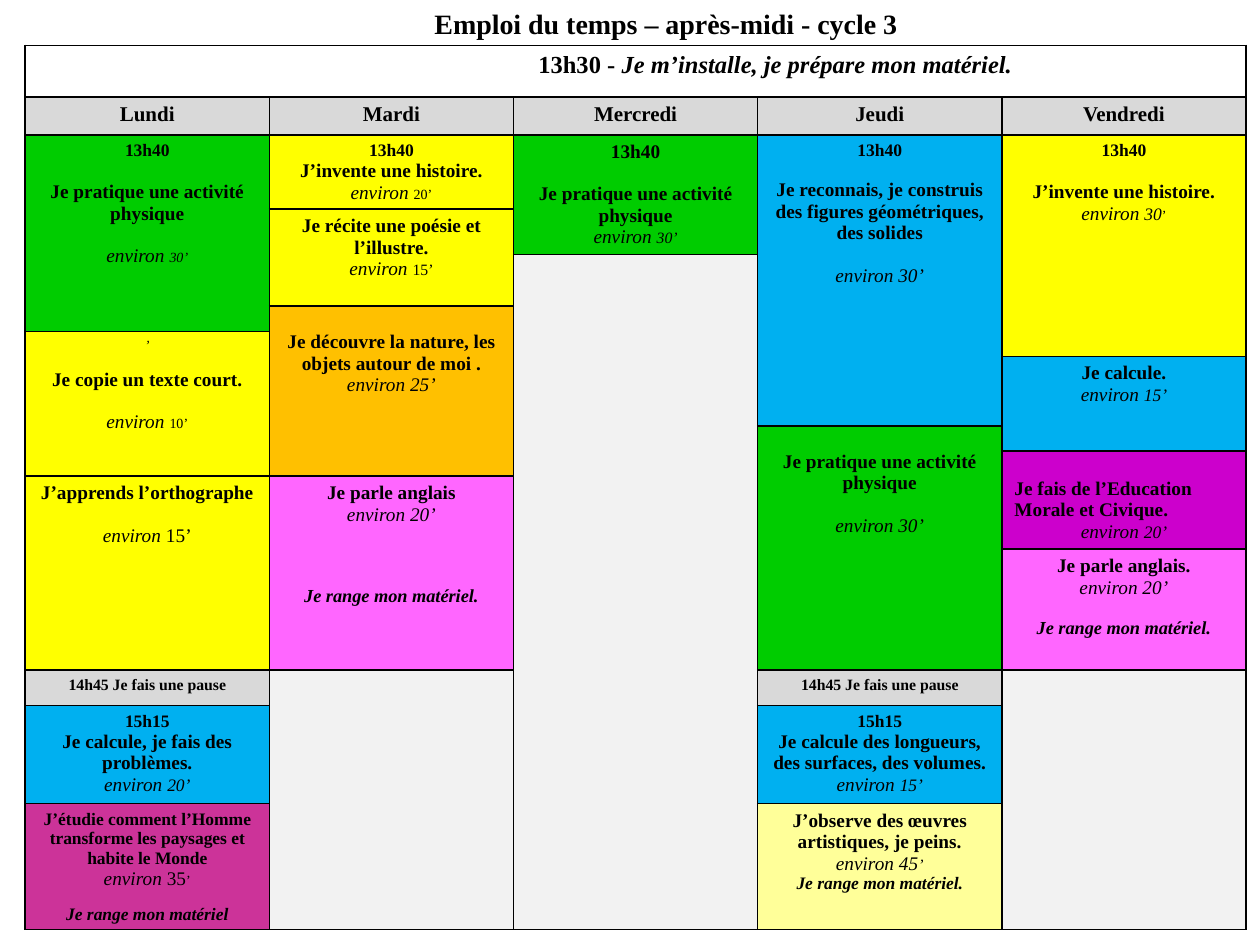
from lxml import etree
from pptx import Presentation
from pptx.dml.color import RGBColor
from pptx.enum.text import PP_ALIGN as Align
from pptx.oxml.ns import qn
from pptx.util import Inches, Pt

FONT = "Times New Roman"
BLACK = RGBColor(0x00, 0x00, 0x00)
GREY = RGBColor(0xD9, 0xD9, 0xD9)
PALE_GREY = RGBColor(0xF2, 0xF2, 0xF2)
GREEN = RGBColor(0x00, 0xCC, 0x00)
YELLOW = RGBColor(0xFF, 0xFF, 0x00)
PALE_YELLOW = RGBColor(0xFF, 0xFF, 0x99)
BLUE = RGBColor(0x00, 0xB0, 0xF0)
ORANGE = RGBColor(0xFF, 0xC0, 0x00)
PINK = RGBColor(0xFF, 0x66, 0xFF)
PURPLE = RGBColor(0xCC, 0x00, 0xCC)
RASPBERRY = RGBColor(0xCC, 0x33, 0x99)

DAYS = ["Lundi", "Mardi", "Mercredi", "Jeudi", "Vendredi"]
ROW_HEIGHTS = [0.41, 0.3, 0.59, 0.36, 0.41, 0.2, 0.2, 0.55,
               0.2, 0.2, 0.58, 0.96, 0.28, 0.78, 1.0]


def line(*runs, gap=0, align=Align.CENTER):
    """One paragraph: runs of (text, size, style), with a gap in points above."""
    return runs, gap, align


def bold(text, size=11, gap=0, align=Align.CENTER):
    return line((text, size, "b"), gap=gap, align=align)


def duration(*minutes, gap=0):
    return line(("environ ", 11, "i"), *minutes, gap=gap)


def tidy_up(size, gap=0, end="."):
    return line(("Je range mon matériel" + end, size, "bi"), gap=gap)


# Per day: first row, rows covered, fill, lines, extra space at the top (points)
ACTIVITIES = [
    [
        (2, 4, GREEN, [bold("13h40", 10), bold("Je pratique une activité physique", gap=12),
                       duration(("30’", 8, "i"), gap=12)], 0),
        (6, 4, YELLOW, [line(("’", 8, "i")), bold("Je copie un texte court.", gap=9),
                        duration(("10’", 8, ""), gap=12)], 0),
        (10, 2, YELLOW, [bold("J’apprends l’orthographe"),
                         duration(("15’", 11, ""), gap=12)], 0),
        (12, 1, GREY, [bold("14h45 Je fais une pause", 9)], 0),
        (13, 1, BLUE, [bold("15h15", 10), bold("Je calcule, je fais des problèmes."),
                       duration(("20’", 10, "i"))], 0),
        (14, 1, RASPBERRY, [
            bold("J’étudie comment l’Homme transforme les paysages et habite le Monde", 10),
            duration(("35", 11, ""), ("’", 8, "")), tidy_up(10, gap=9, end="")], 0),
    ],
    [
        (2, 1, YELLOW, [bold("13h40", 10), bold("J’invente une histoire."),
                        duration(("20’", 8, ""))], 0),
        (3, 2, YELLOW, [bold("Je récite une poésie et l’illustre."),
                        duration(("15’", 9, ""))], 0),
        (5, 5, ORANGE, [bold("Je découvre la nature, les objets autour de moi ."),
                        duration(("25’", 11, "i"))], 11),
        (10, 2, PINK, [bold("Je parle anglais"), duration(("20’", 11, "i")),
                       tidy_up(10.5, gap=35)], 0),
        (12, 3, PALE_GREY, [], 0),
    ],
    [
        (2, 2, GREEN, [bold("13h40"), bold("Je pratique une activité physique", gap=12),
                       duration(("30’", 9, "i"))], 0),
        (4, 11, PALE_GREY, [], 0),
    ],
    [
        (2, 6, BLUE, [bold("13h40", 10),
                      bold("Je reconnais, je construis des figures géométriques, des solides",
                           gap=11),
                      duration(("30’", 11, "i"), gap=12)], 0),
        (8, 4, GREEN, [bold("Je pratique une activité physique"),
                       duration(("30’", 11, "i"), gap=12)], 11),
        (12, 1, GREY, [bold("14h45 Je fais une pause", 9)], 0),
        (13, 1, BLUE, [bold("15h15", 10),
                       bold("Je calcule des longueurs, des surfaces, des volumes."),
                       duration(("15’", 10, "i"))], 0),
        (14, 1, PALE_YELLOW, [bold("J’observe des œuvres artistiques, je peins."),
                              duration(("45", 11, "i"), ("’", 9, "i")), tidy_up(10)], 0),
    ],
    [
        (2, 5, YELLOW, [bold("13h40", 10), bold("J’invente une histoire.", gap=12),
                        duration(("30", 10, "i"), ("’", 8, ""))], 0),
        (7, 2, BLUE, [bold("Je calcule."), duration(("15’", 10, "i"))], 0),
        (9, 2, PURPLE, [bold("Je fais de l’Education Morale et Civique.", align=Align.LEFT),
                        duration(("20’", 10, "i"))], 12),
        (11, 1, PINK, [bold("Je parle anglais."), duration(("20’", 11, "i")),
                       tidy_up(10.5, gap=11)], 0),
        (12, 3, PALE_GREY, [], 0),
    ],
]


def write_lines(text_frame, lines):
    for index, (runs, gap, align) in enumerate(lines):
        paragraph = text_frame.add_paragraph() if index else text_frame.paragraphs[0]
        paragraph.alignment = align
        if gap:
            paragraph.space_before = Pt(gap)
        for text, size, style in runs:
            run = paragraph.add_run()
            run.text = text
            font = run.font
            font.name, font.size = FONT, Pt(size)
            font.bold, font.italic = "b" in style, "i" in style
            font.color.rgb = BLACK


def indent_paragraph(paragraph, indent):
    properties = paragraph._p.get_or_add_pPr()
    properties.set("marL", str(indent))
    properties.set("indent", "0")


def draw_borders(cell):
    properties = cell._tc.get_or_add_tcPr()
    for side in ("a:lnL", "a:lnR", "a:lnT", "a:lnB"):
        border = etree.SubElement(properties, qn(side), w=str(Pt(1)))
        solid = etree.SubElement(border, qn("a:solidFill"))
        etree.SubElement(solid, qn("a:srgbClr"), val=str(BLACK))


def fill_cell(cell, color, lines, extra_top=0):
    cell.margin_top = Inches(0.05) + Pt(extra_top)
    if color is None:
        cell.fill.background()
    else:
        cell.fill.solid()
        cell.fill.fore_color.rgb = color
    write_lines(cell.text_frame, lines)


def add_timetable(slide, left, top, width):
    height = Inches(sum(ROW_HEIGHTS))
    table = slide.shapes.add_table(len(ROW_HEIGHTS), len(DAYS), left, top, width, height).table
    table.first_row = table.horz_banding = False
    for column in table.columns:
        column.width = int(width / len(DAYS))
    for row, row_height in zip(table.rows, ROW_HEIGHTS):
        row.height = Inches(row_height)
    for cell in table.iter_cells():
        draw_borders(cell)
        cell.margin_left = cell.margin_right = Inches(0.1)
        cell.margin_bottom = Inches(0.04)

    heading = table.cell(0, 0)
    heading.merge(table.cell(0, len(DAYS) - 1))
    fill_cell(heading, None, [line(("13h30 - ", 14, "b"),
                                   ("Je m’installe, je prépare mon matériel.", 14, "bi"))])
    indent_paragraph(heading.text_frame.paragraphs[0], Inches(2.22))

    for column, (day, activities) in enumerate(zip(DAYS, ACTIVITIES)):
        fill_cell(table.cell(1, column), GREY, [bold(day, 12)])
        for first_row, row_count, color, lines, extra_top in activities:
            cell = table.cell(first_row, column)
            if row_count > 1:
                cell.merge(table.cell(first_row + row_count - 1, column))
            fill_cell(cell, color, lines, extra_top)


def add_title(slide, left, top, width, height):
    text_frame = slide.shapes.add_textbox(left, top, width, height).text_frame
    text_frame.word_wrap = False
    write_lines(text_frame, [bold("Emploi du temps – après-midi - cycle 3", 16,
                                  align=Align.LEFT)])


def main():
    presentation = Presentation()
    presentation.slide_width, presentation.slide_height = Inches(10), Inches(7.5)
    slide = presentation.slides.add_slide(presentation.slide_layouts[6])
    add_timetable(slide, Inches(0.2), Inches(0.36), Inches(9.69))
    add_title(slide, Inches(3.35), Inches(0), Inches(3.93), Inches(0.37))
    presentation.save("out.pptx")


if __name__ == "__main__":
    main()
